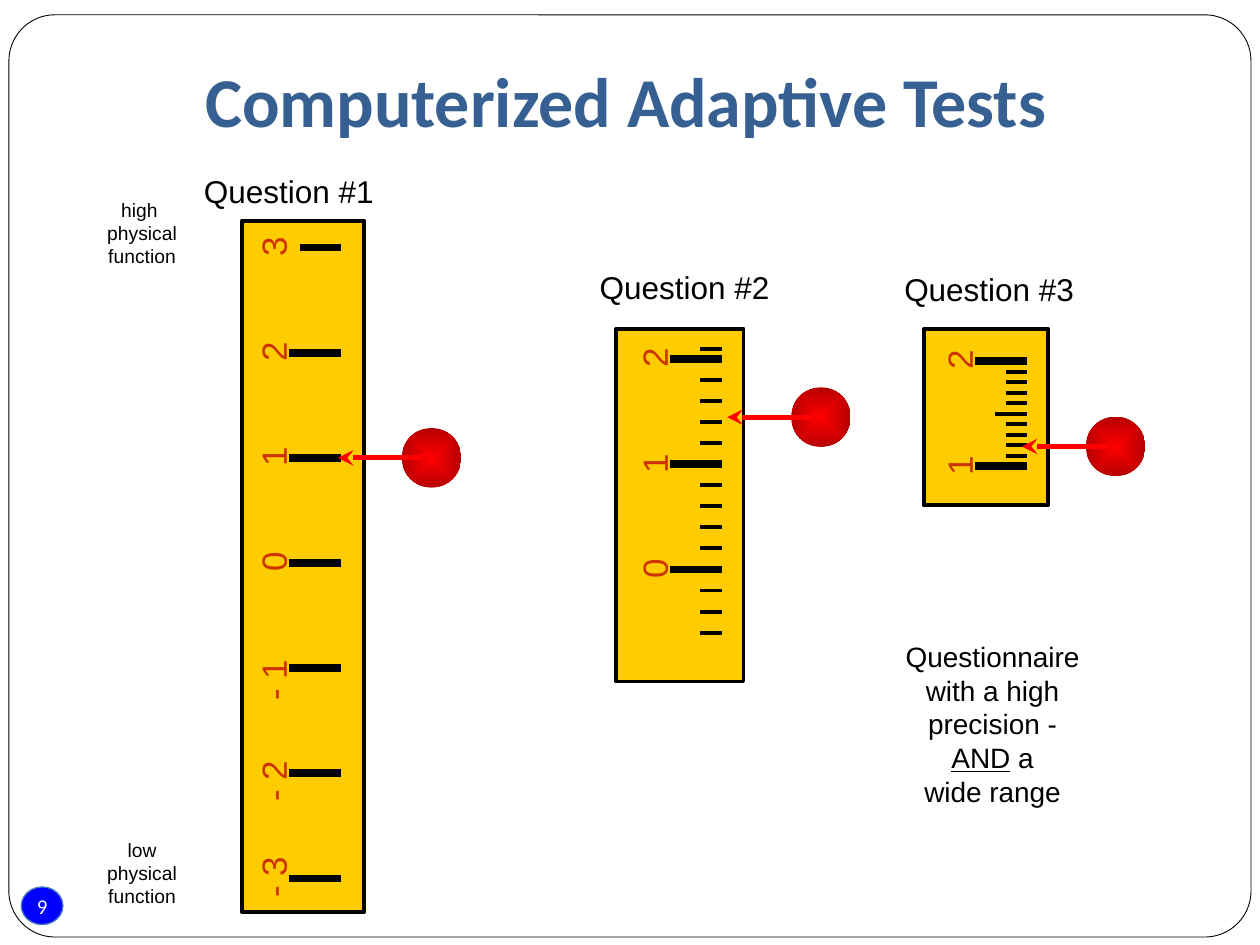
from dataclasses import dataclass
from typing import Sequence

from lxml import etree
from pptx import Presentation
from pptx import util as u
from pptx.dml.color import RGBColor
from pptx.enum import shapes, text
from pptx.oxml.ns import qn

BLACK = RGBColor(0x00, 0x00, 0x00)
WHITE = RGBColor(0xFF, 0xFF, 0xFF)
BLUE = RGBColor(0x00, 0x00, 0xFF)
BADGE_EDGE = RGBColor(0x4B, 0x7E, 0xBC)
TITLE_BLUE = RGBColor(0x37, 0x60, 0x92)
YELLOW = RGBColor(0xFF, 0xCC, 0x00)
RUST = RGBColor(0xCC, 0x33, 0x00)
RED = RGBColor(0xFF, 0x00, 0x00)
DARK_RED = RGBColor(0xB6, 0x00, 0x00)

UNIT = 2.12
MAJOR, HALF, MINOR = 1.05, 0.64, 0.43
LABEL_HEIGHT = 1.09
BALL = 1.2


@dataclass(frozen=True)
class Box:
    left: float
    top: float
    width: float
    height: float

    def lengths(self) -> list[u.Length]:
        return [u.Cm(v) for v in (self.left, self.top, self.width, self.height)]


@dataclass(frozen=True)
class Style:
    size: float
    color: RGBColor = BLACK
    font: str = "Arial"
    bold: bool = False
    align: text.PP_ALIGN = text.PP_ALIGN.CENTER


@dataclass(frozen=True)
class Span:
    words: str
    underline: bool = False


@dataclass(frozen=True)
class Ruler:
    body: Box
    zero: float
    label_x: float
    tick_right: float
    values: Sequence[int]
    heading: str
    heading_box: Box
    minor: Sequence[float] = ()
    half: Sequence[float] = ()
    behind_labels: Sequence[int] = ()

    def y(self, value: float) -> float:
        return self.zero - UNIT * value


@dataclass(frozen=True)
class Answer:
    x: float
    y: float


@dataclass(frozen=True)
class Note:
    box: Box
    paragraphs: Sequence[Sequence[Span]]
    style: Style


HEADING = Style(18, align=text.PP_ALIGN.LEFT)
LABEL = Style(20, RUST, align=text.PP_ALIGN.LEFT)
LABEL_SHIFT = {-1: 0.24, -2: 0.16}

RULERS = [
    Ruler(Box(4.88, 4.45, 2.46, 13.94), 11.35, 5.5, 6.88, range(3, -4, -1),
          "Question #1", Box(3.86, 3.33, 3.96, 1.02), behind_labels=[3]),
    Ruler(Box(12.42, 6.63, 2.57, 7.11), 11.48, 13.18, 14.55, [2, 1, 0],
          "Question #2", Box(11.84, 5.28, 3.96, 1.02),
          minor=[2.1] + [2 - i / 5 for i in range(14)]),
    Ruler(Box(18.62, 6.63, 2.51, 3.56), 11.52, 19.33, 20.7, [2, 1],
          "Question #3", Box(17.98, 5.31, 3.96, 1.02),
          minor=[2 - i / 10 for i in range(11)], half=[1.5]),
]
ANSWERS = [Answer(8.7, 9.23), Answer(22.49, 9), Answer(16.55, 8.41)]
NOTES = [
    Note(Box(1.9, 3.86, 1.93, 1.68),
         [[Span("high \nphysical")], [Span("function")]], Style(11)),
    Note(Box(1.9, 16.76, 1.93, 1.68),
         [[Span("low\nphysical")], [Span("function")]], Style(11)),
    Note(Box(17.98, 12.75, 4.06, 3.68),
         [[Span("Questionnaire\nwith a high\nprecision -\n"),
           Span("AND", underline=True), Span(" a\nwide range")]], Style(16)),
]


def write(frame, paragraphs: Sequence[Sequence[Span]], style: Style,
          wrap: bool = False) -> None:
    frame.word_wrap = wrap
    frame.vertical_anchor = text.MSO_ANCHOR.MIDDLE
    for index, spans in enumerate(paragraphs):
        paragraph = frame.add_paragraph() if index else frame.paragraphs[0]
        paragraph.alignment = style.align
        for span in spans:
            for row, words in enumerate(span.words.split("\n")):
                if row:
                    paragraph.add_line_break()
                if words:
                    run = paragraph.add_run()
                    run.text = words
                    font = run.font
                    font.name, font.size = style.font, u.Pt(style.size)
                    font.bold, font.underline = style.bold, span.underline
                    font.color.rgb = style.color


def add_text(slide, box: Box, paragraphs: Sequence[Sequence[Span]], style: Style,
             wrap: bool = False) -> None:
    write(slide.shapes.add_textbox(*box.lengths()).text_frame, paragraphs, style, wrap)


def add_shape(slide, preset, box: Box, fill: RGBColor | None = None,
              edge: RGBColor | None = None, weight: float = 0):
    shape = slide.shapes.add_shape(preset, *box.lengths())
    shape.shadow.inherit = False
    if fill is None:
        shape.fill.background()
    else:
        shape.fill.solid()
        shape.fill.fore_color.rgb = fill
    if edge is None:
        shape.line.fill.background()
    else:
        shape.line.color.rgb = edge
        shape.line.width = u.Pt(weight)
    return shape


def add_line(slide, start: float, end: float, y: float, color: RGBColor,
             weight: float, arrow: bool = False) -> None:
    line = slide.shapes.add_connector(
        shapes.MSO_CONNECTOR.STRAIGHT, u.Cm(start), u.Cm(y), u.Cm(end), u.Cm(y))
    line.line.color.rgb = color
    line.line.width = u.Pt(weight)
    properties = line._element.spPr
    if arrow:
        etree.SubElement(properties.find(qn("a:ln")), qn("a:tailEnd"), type="stealth")
    etree.SubElement(properties, qn("a:effectLst"))


def add_ticks(slide, ruler: Ruler, values: Sequence[float], length: float,
              weight: float) -> None:
    for value in values:
        add_line(slide, ruler.tick_right, ruler.tick_right - length,
                 ruler.y(value), BLACK, weight)


def add_ruler(slide, ruler: Ruler) -> None:
    add_shape(slide, shapes.MSO_SHAPE.RECTANGLE, ruler.body, YELLOW, BLACK, 2.25)
    add_ticks(slide, ruler, ruler.behind_labels, MAJOR, 4.5)
    for value in ruler.values:
        width = 1.32 if value < 0 else 0.91
        middle = ruler.y(value) + LABEL_SHIFT.get(value, -0.03)
        label = add_shape(slide, shapes.MSO_SHAPE.RECTANGLE, Box(
            ruler.label_x - width / 2, middle - LABEL_HEIGHT / 2, width, LABEL_HEIGHT), YELLOW)
        label.rotation = 270
        words = f"- {-value}" if value < 0 else str(value)
        write(label.text_frame, [[Span(words)]], LABEL)
    uncovered = [value for value in ruler.values if value not in ruler.behind_labels]
    add_ticks(slide, ruler, uncovered, MAJOR, 4.5)
    add_ticks(slide, ruler, ruler.minor, MINOR, 2.25)
    add_ticks(slide, ruler, ruler.half, HALF, 2.25)
    add_text(slide, ruler.heading_box, [[Span(ruler.heading)]], HEADING)


def add_answer(slide, answer: Answer) -> None:
    ball = add_shape(slide, shapes.MSO_SHAPE.OVAL, Box(
        answer.x - BALL / 2, answer.y - BALL / 2, BALL, BALL))
    ball.fill.gradient()
    for stop, color in zip(ball.fill.gradient_stops, (RED, DARK_RED)):
        stop.color.rgb = color
    gradient = ball._element.spPr.find(qn("a:gradFill"))
    gradient.remove(gradient.find(qn("a:lin")))
    radial = etree.Element(qn("a:path"), {"path": "shape"})
    etree.SubElement(radial, qn("a:fillToRect"), dict.fromkeys("ltrb", "50000"))
    gradient.find(qn("a:gsLst")).addnext(radial)
    add_line(slide, answer.x - 0.17, answer.x - 1.89, answer.y, RED, 3, arrow=True)


def main() -> None:
    deck = Presentation()
    deck.slide_width, deck.slide_height = u.Cm(25.4), u.Cm(19.05)
    slide = deck.slides.add_slide(deck.slide_layouts[6])
    badge = add_shape(slide, shapes.MSO_SHAPE.OVAL, Box(0.43, 17.88, 0.84, 0.76),
                      BLUE, BADGE_EDGE, 0.75)
    frame = badge.text_frame
    frame.margin_left = frame.margin_right = frame.margin_top = frame.margin_bottom = 0
    write(frame, [[Span("9")]], Style(12, WHITE, "Calibri"), wrap=True)
    border = add_shape(slide, shapes.MSO_SHAPE.ROUNDED_RECTANGLE,
                       Box(0.18, 0.3, 25.04, 18.59), edge=BLACK, weight=0.5)
    border.adjustments[0] = 0.05
    add_text(slide, Box(2.39, 0.69, 20.45, 2.64), [[Span("Computerized Adaptive Tests")]],
             Style(40, TITLE_BLUE, "Calibri", bold=True), wrap=True)
    for ruler in RULERS:
        add_ruler(slide, ruler)
    for answer in ANSWERS:
        add_answer(slide, answer)
    for note in NOTES:
        add_text(slide, note.box, note.paragraphs, note.style)
    deck.save("out.pptx")


if __name__ == "__main__":
    main()
